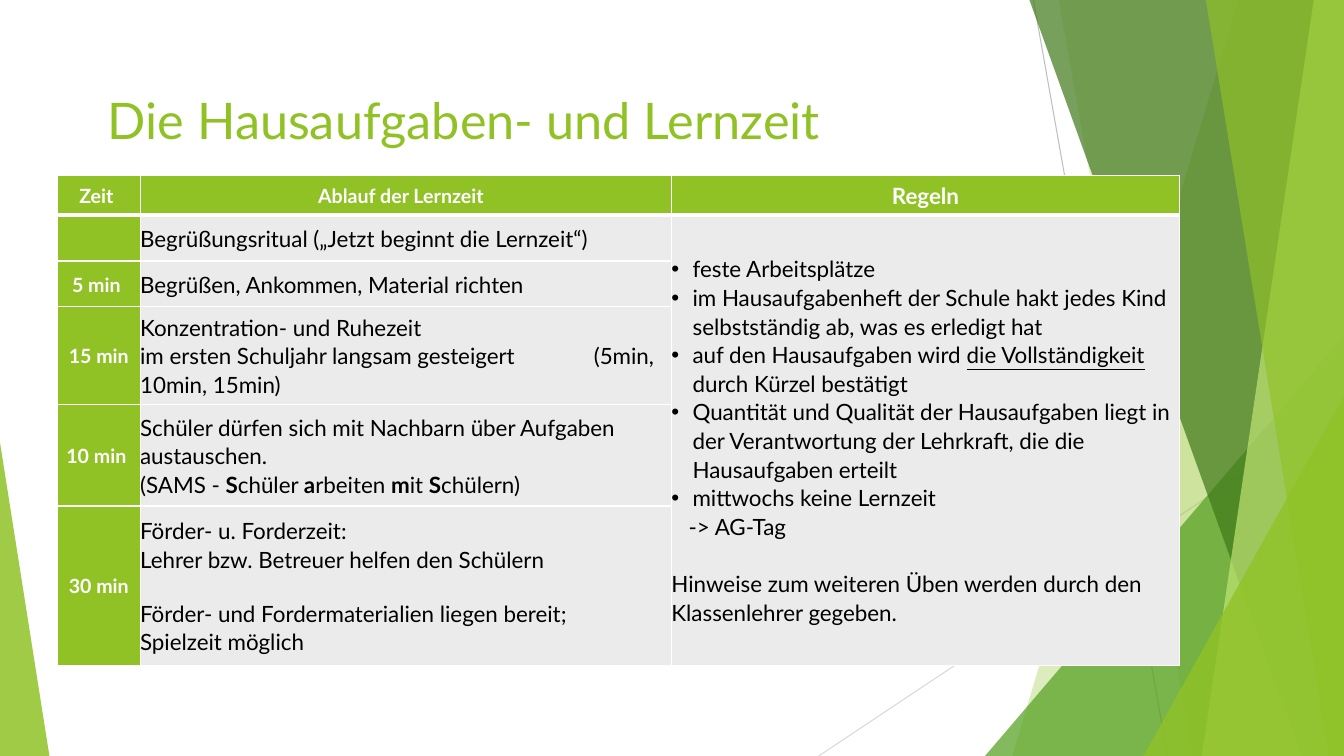
from dataclasses import dataclass

from lxml.etree import SubElement
from pptx import Presentation
from pptx.dml.color import RGBColor
from pptx.enum.shapes import MSO_CONNECTOR
from pptx.enum.text import MSO_ANCHOR as Anchor, PP_ALIGN as Align
from pptx.oxml.ns import qn
from pptx.util import Inches, Pt

COLORS = {
    "lime": "90C226", "green": "54A021", "forest": "3F7819", "pale": "C0E474",
    "gray": "EBEBEB", "line": "BFBFBF", "light_line": "D9D9D9",
    "white": "FFFFFF", "black": "000000",
}
FONT = "Lato"
WIDTH, HEIGHT = 13.33, 7.5


@dataclass(frozen=True)
class Ray:
    start: tuple
    end: tuple
    color: str


@dataclass(frozen=True)
class Facet:
    points: tuple
    color: str
    opacity: int


@dataclass(frozen=True)
class Para:
    text: str
    bullet: bool = False
    emphasis: str = "bold"
    indent: float = 0
    before: float = 0
    tab: float = 0


@dataclass(frozen=True)
class Step:
    time: str
    content: tuple
    height: float


RAYS = [
    Ray((10.25, 0), (11.58, HEIGHT), "line"),
    Ray((WIDTH, 4.03), (8.12, HEIGHT), "light_line"),
]


def right_band(top: float, bottom: float) -> tuple:
    return (top, 0), (WIDTH, 0), (WIDTH, HEIGHT), (bottom, HEIGHT)


def right_corner(left: float, top: float) -> tuple:
    return (left, HEIGHT), (WIDTH, top), (WIDTH, HEIGHT)


FACETS = [
    Facet(right_band(12.28, 10.04), "lime", 30),
    Facet(right_band(10.5, 11.83), "lime", 20),
    Facet(right_corner(9.77, 3.33), "green", 72),
    Facet(right_band(10.21, 12.91), "forest", 70),
    Facet(right_band(13.03, 11.92), "pale", 70),
    Facet(right_band(11.96, 13.18), "lime", 65),
    Facet(right_corner(11.34, 3.93), "lime", 80),
    Facet(((0, HEIGHT), (0, 4.39), (0.49, HEIGHT)), "lime", 85),
]

COLUMNS = [0.82, 5.27, 5.04]
HEADER_HEIGHT = 0.39
HEADERS = [("Zeit ", 14), ("Ablauf der Lernzeit  ", 14), ("Regeln", 16)]
STEPS = [
    Step("", (Para("Begrüßungsritual („Jetzt beginnt die Lernzeit“)"),), 0.46),
    Step("5 min ", (Para("Begrüßen, Ankommen, Material richten"),), 0.45),
    Step("15 min", (
        Para("Konzentration- und Ruhezeit\n"
             "im ersten Schuljahr langsam gesteigert\t(5min, 10min, 15min)", tab=4.5),
    ), 0.97),
    Step("10 min ", (
        Para("Schüler dürfen sich mit Nachbarn über Aufgaben austauschen."),
        Para("(SAMS - *S*chüler *a*rbeiten *m*it *S*chülern)"),
    ), 1.01),
    Step("30 min", (
        Para("Förder- u. Forderzeit:\nLehrer bzw. Betreuer helfen den Schülern"),
        Para("Förder- und Fordermaterialien liegen bereit;\nSpielzeit möglich", before=18),
    ), 1.58),
]
RULES = (
    Para("feste Arbeitsplätze", bullet=True),
    Para("im Hausaufgabenheft der Schule hakt jedes Kind selbstständig ab, "
         "was es erledigt hat", bullet=True),
    Para("auf den Hausaufgaben wird *die Vollständigkeit *durch Kürzel bestätigt",
         bullet=True, emphasis="underline"),
    Para("Quantität und Qualität der Hausaufgaben liegt in der Verantwortung "
         "der Lehrkraft, die die Hausaufgaben erteilt", bullet=True),
    Para("mittwochs keine Lernzeit", bullet=True),
    Para("-> AG-Tag", indent=0.17),
    Para("Hinweise zum weiteren Üben werden durch den Klassenlehrer gegeben.", before=20.5),
)


def rgb(name: str) -> RGBColor:
    return RGBColor.from_string(COLORS[name])


def add_text(p, text: str, *, size: float, color: str, bold: bool = False,
             emphasis: str = "bold") -> None:
    for i, part in enumerate(text.split("*")):
        for j, line in enumerate(part.split("\n")):
            if j:
                p.add_line_break()
            if not line:
                continue
            r = p.add_run()
            r.text = line
            r.font.name = FONT
            r.font.size = Pt(size)
            r.font.bold = bold
            r.font.color.rgb = rgb(color)
            if i % 2:
                setattr(r.font, emphasis, True)


def add_ray(slide, ray: Ray) -> None:
    points = [Inches(v) for v in ray.start + ray.end]
    line = slide.shapes.add_connector(MSO_CONNECTOR.STRAIGHT, *points)
    line.line.color.rgb = rgb(ray.color)
    line.line.width = Pt(0.75)
    SubElement(line._element.spPr, qn("a:effectLst"))


def add_facet(slide, facet: Facet) -> None:
    points = [(Inches(x), Inches(y)) for x, y in facet.points]
    builder = slide.shapes.build_freeform(*points[0])
    builder.add_line_segments(points[1:], close=True)
    sp = builder.convert_to_shape()
    sp.shadow.inherit = False
    sp.line.fill.background()
    sp.fill.solid()
    sp.fill.fore_color.rgb = rgb(facet.color)
    color = sp._element.spPr.find(qn("a:solidFill"))[0]
    SubElement(color, qn("a:alpha"), val=str(facet.opacity * 1000))


def style_cell(cell, fill: str, top: float = 1, bottom: float = 1) -> None:
    cell.margin_left = cell.margin_right = cell.margin_top = cell.margin_bottom = 0
    cell.vertical_anchor = Anchor.MIDDLE
    tc_pr = cell._tc.get_or_add_tcPr()
    for side, width in (("L", 1), ("R", 1), ("T", top), ("B", bottom)):
        border = SubElement(tc_pr, qn(f"a:ln{side}"), w=str(Pt(width)))
        solid = SubElement(border, qn("a:solidFill"))
        SubElement(solid, qn("a:srgbClr"), val=COLORS["white"])
    cell.fill.solid()
    cell.fill.fore_color.rgb = rgb(fill)


def fill_label(cell, text: str, size: float = 14) -> None:
    p = cell.text_frame.paragraphs[0]
    p.alignment = Align.CENTER
    p.line_spacing = 1.07
    add_text(p, text, size=size, color="white", bold=True)


def fill_body(cell, paras: tuple) -> None:
    tf = cell.text_frame
    for i, para in enumerate(paras):
        p = tf.add_paragraph() if i else tf.paragraphs[0]
        p.line_spacing = 1.07
        p.space_before = Pt(para.before)
        p_pr = p._p.get_or_add_pPr()
        if para.bullet:
            p_pr.set("marL", str(Inches(0.21)))
            p_pr.set("indent", str(Inches(-0.21)))
            SubElement(p_pr, qn("a:buFont"), typeface="Arial")
            SubElement(p_pr, qn("a:buChar"), char="•")
        elif para.indent:
            p_pr.set("marL", str(Inches(para.indent)))
        if para.tab:
            tabs = SubElement(p_pr, qn("a:tabLst"))
            SubElement(tabs, qn("a:tab"), pos=str(Inches(para.tab)), algn="l")
        add_text(p, para.text, size=16, color="black", emphasis=para.emphasis)


def add_schedule(slide) -> None:
    heights = [HEADER_HEIGHT] + [step.height for step in STEPS]
    table = slide.shapes.add_table(
        len(heights), len(COLUMNS), Inches(0.57), Inches(1.74),
        Inches(sum(COLUMNS)), Inches(sum(heights))).table
    for column, width in zip(table.columns, COLUMNS):
        column.width = Inches(width)
    for row, height in zip(table.rows, heights):
        row.height = Inches(height)
    for col, (text, size) in enumerate(HEADERS):
        style_cell(table.cell(0, col), "lime", bottom=3)
        fill_label(table.cell(0, col), text, size)
    for row, step in enumerate(STEPS, 1):
        for col, fill in enumerate(("lime", "gray", "gray")):
            style_cell(table.cell(row, col), fill, top=3 if row == 1 else 1)
        fill_label(table.cell(row, 0), step.time)
        fill_body(table.cell(row, 1), step.content)
    rules = table.cell(1, 2)
    rules.merge(table.cell(len(STEPS), 2))
    fill_body(rules, RULES)


def main() -> None:
    prs = Presentation()
    prs.slide_width, prs.slide_height = Inches(WIDTH), Inches(HEIGHT)
    slide = prs.slides.add_slide(prs.slide_layouts[6])
    for ray in RAYS:
        add_ray(slide, ray)
    for facet in FACETS:
        add_facet(slide, facet)
    title = slide.shapes.add_textbox(Inches(1.02), Inches(0.83), Inches(7.68), Inches(0.79))
    tf = title.text_frame
    tf.word_wrap = True
    tf.margin_left = tf.margin_right = tf.margin_top = tf.margin_bottom = Inches(0.05)
    add_text(tf.paragraphs[0], "Die Hausaufgaben- und Lernzeit", size=36, color="lime")
    add_schedule(slide)
    prs.save("out.pptx")


if __name__ == "__main__":
    main()
